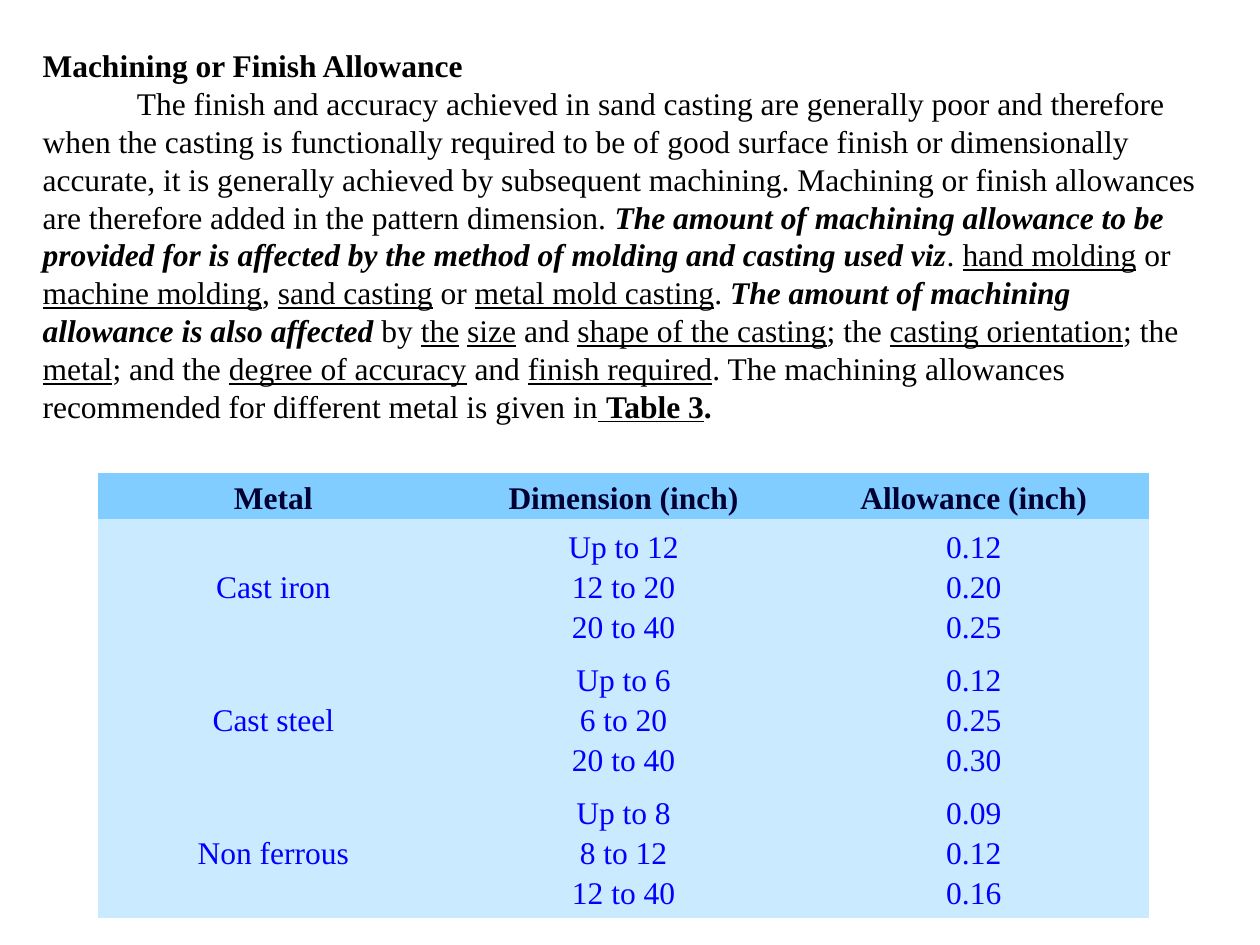
from pptx import Presentation
from pptx import util as u
from pptx.dml.color import RGBColor
from pptx.enum import text as t

FONT, SIZE = "Times New Roman", u.Pt(18)
HUES = {"text": "000000", "head": "000033", "body": "0000FF",
        "dark": "82CDFF", "light": "CAEAFF"}

TITLE = "Machining or Finish Allowance"
RUNS = [
    ("The finish and accuracy achieved in sand casting are generally poor and "
     "therefore when the casting is functionally required to be of good surface "
     "finish or dimensionally accurate, it is generally achieved by subsequent "
     "machining. Machining or finish allowances are therefore added in the "
     "pattern dimension. ", ""),
    ("The amount of machining allowance to be provided for is affected by the "
     "method of molding and casting used viz", "bi"),
    (". ", ""), ("hand molding", "u"),
    (" or ", ""), ("machine molding", "u"),
    (", ", ""), ("sand casting", "u"),
    (" or ", ""), ("metal mold casting", "u"),
    (". ", ""), ("The amount of machining allowance is also affected", "bi"),
    (" by ", ""), ("the", "u"),
    (" ", ""), ("size", "u"),
    (" and ", ""), ("shape of the casting", "u"),
    ("; the ", ""), ("casting orientation", "u"),
    ("; the", ""), (" metal", "u"),
    ("; and the ", ""), ("degree of accuracy", "u"),
    (" and ", ""), ("finish required", "u"),
    (". The machining allowances recommended for different metal is given in", ""),
    (" ", "u"), ("Table 3", "bu"), (".", "b"),
]
ROWS = [
    ("Metal", "Dimension (inch)", "Allowance (inch)"),
    ("Cast iron", "Up to 12\n12 to 20\n20 to 40", "0.12\n0.20\n0.25"),
    ("Cast steel", "Up to 6\n6 to 20\n20 to 40", "0.12\n0.25\n0.30"),
    ("Non ferrous", "Up to 8\n8 to 12\n12 to 40", "0.09\n0.12\n0.16"),
]
WIDE, HEAD, BODY = u.Cm(7.06), u.Cm(0.93), u.Cm(2.68)
PLAIN = "{2D5ABB26-0587-4C30-8999-92F81FD0307C}"


def style(para, hue, bold=False):
    font = para.font
    font.name, font.size, font.bold = FONT, SIZE, bold
    font.color.rgb = RGBColor.from_string(HUES[hue])


def add_text(slide):
    box = slide.shapes.add_textbox(u.Cm(0.61), u.Cm(0.81), u.Cm(23.93), u.Cm(8.71))
    frame = box.text_frame
    frame.word_wrap = True
    title = frame.paragraphs[0]
    title.text = TITLE
    style(title, "text", True)
    para = frame.add_paragraph()
    style(para, "text")
    para._p.get_or_add_pPr().set("indent", str(u.Cm(1.9)))
    for words, marks in RUNS:
        run = para.add_run()
        run.text = words
        if "b" in marks:
            run.font.bold = True
        if "i" in marks:
            run.font.italic = True
        if "u" in marks:
            run.font.underline = True


def fill_cell(cell, words, head):
    cell.fill.solid()
    cell.fill.fore_color.rgb = RGBColor.from_string(HUES["dark" if head else "light"])
    cell.vertical_anchor = t.MSO_ANCHOR.MIDDLE
    cell.margin_left = cell.margin_right = u.Cm(0.03)
    cell.margin_top = cell.margin_bottom = u.Cm(0.03)
    cell.text = words
    for para in cell.text_frame.paragraphs:
        style(para, "head" if head else "body", head)
        para.alignment = t.PP_ALIGN.CENTER
        para.line_spacing = 1.15
        if head:
            para.space_after = u.Pt(10)


def add_grid(slide):
    cols = len(ROWS[0])
    shape = slide.shapes.add_table(len(ROWS), cols, u.Cm(1.98), u.Cm(9.53),
                                   WIDE * cols, HEAD + BODY * (len(ROWS) - 1))
    shape._element.xpath(".//a:tableStyleId")[0].text = PLAIN
    grid = shape.table
    grid.first_row = grid.horz_banding = False
    for col in grid.columns:
        col.width = WIDE
    for r, row in enumerate(ROWS):
        grid.rows[r].height = BODY if r else HEAD
        for c, words in enumerate(row):
            fill_cell(grid.cell(r, c), words, r == 0)


def main():
    deck = Presentation()
    deck.slide_width, deck.slide_height = u.Cm(25.4), u.Cm(19.05)
    slide = deck.slides.add_slide(deck.slide_layouts[6])
    add_grid(slide)
    add_text(slide)
    deck.save("out.pptx")


if __name__ == "__main__":
    main()
